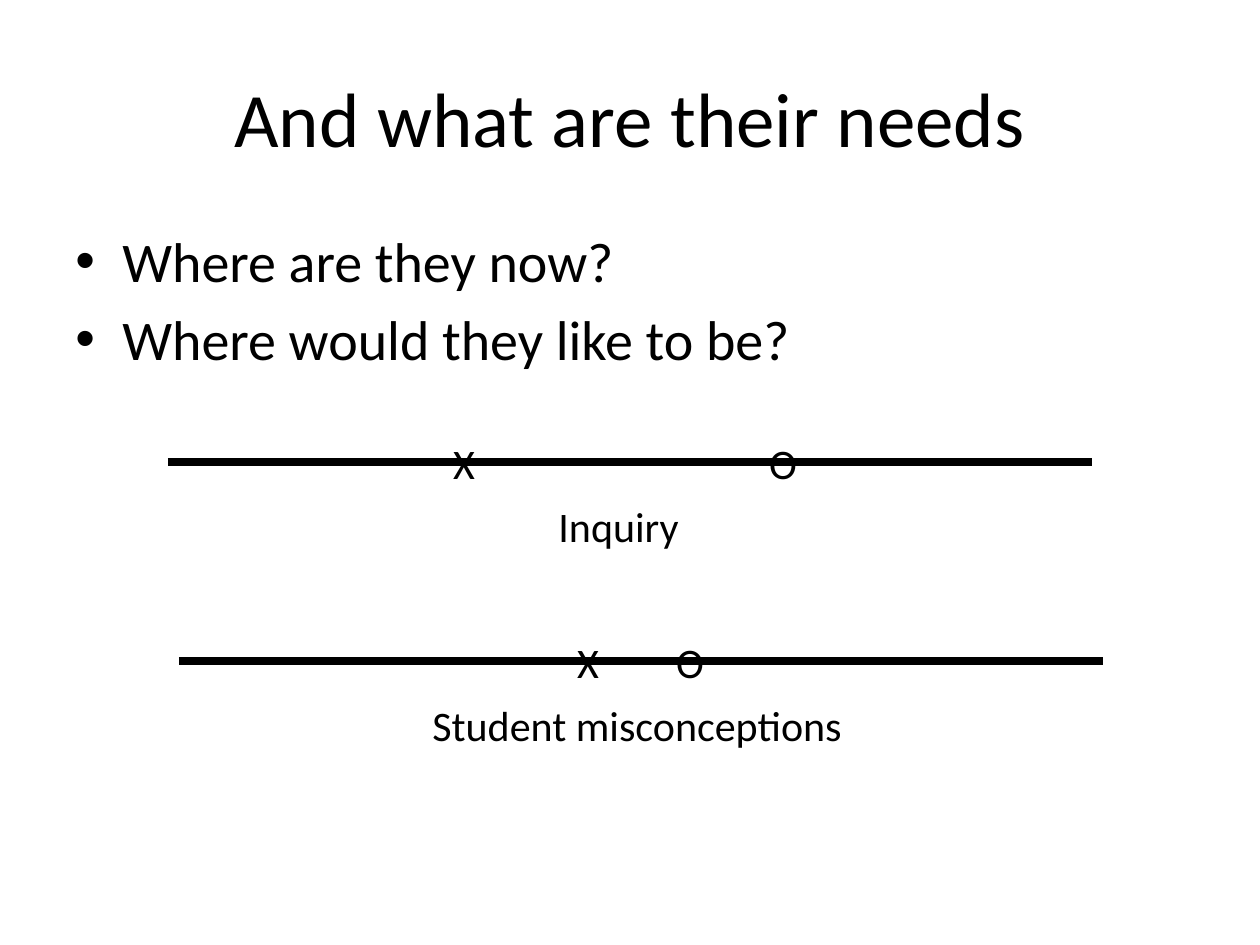
from lxml.etree import SubElement
from pptx import Presentation
from pptx.dml.color import RGBColor
from pptx.enum.shapes import MSO_CONNECTOR
from pptx.enum.text import MSO_ANCHOR, PP_ALIGN
from pptx.oxml.ns import qn
from pptx.util import Emu, Pt

BLACK = RGBColor(0x00, 0x00, 0x00)
WHITE = RGBColor(0xFF, 0xFF, 0xFF)
FONT = "Calibri"
PIXELS_PER_INCH = 126
MARKER_WIDTH = 60
ROW_HEIGHT = 63


def px(length):
    return Emu(round(length * 914400 / PIXELS_PER_INCH))


def set_attributes(target, values):
    for name, value in values.items():
        setattr(target, name, value)


def add_text(slide, box, lines, size, frame_format=None, paragraph_format=None):
    shape = slide.shapes.add_textbox(*map(px, box))
    frame = shape.text_frame
    set_attributes(frame, {"word_wrap": True, **(frame_format or {})})
    frame.text = "\n".join(lines)
    for paragraph in frame.paragraphs:
        set_attributes(paragraph, paragraph_format or {})
        for run in paragraph.runs:
            set_attributes(run.font, {"name": FONT, "size": Pt(size)})
            run.font.color.rgb = BLACK
    return frame


def add_title(slide, box, text):
    add_text(slide, box, [text], 44,
             {"vertical_anchor": MSO_ANCHOR.MIDDLE},
             {"alignment": PP_ALIGN.CENTER})


def add_bullets(slide, box, lines):
    frame = add_text(slide, box, lines, 32,
                     paragraph_format={"space_before": Pt(6.4)})
    indent = px(47)
    for paragraph in frame.paragraphs:
        properties = paragraph._p.get_or_add_pPr()
        properties.set("marL", str(indent))
        properties.set("indent", str(-indent))
        SubElement(properties, qn("a:buFont"), typeface="Arial")
        SubElement(properties, qn("a:buChar"), char="•")


def add_scale(slide, box, markers, label, label_offset):
    left, top, width, height = box
    middle = top + ROW_HEIGHT // 2
    line = slide.shapes.add_connector(
        MSO_CONNECTOR.STRAIGHT,
        px(left), px(middle), px(left + width), px(middle))
    line.line.color.rgb = BLACK
    line.line.width = Pt(4.5)
    SubElement(line._element.spPr, qn("a:effectLst"))
    for text, center in markers.items():
        marker_left = left + center - MARKER_WIDTH // 2
        add_text(slide, (marker_left, top, MARKER_WIDTH, ROW_HEIGHT), [text], 24,
                 paragraph_format={"alignment": PP_ALIGN.CENTER})
    label_box = (left + label_offset, top + ROW_HEIGHT,
                 width - 2 * label_offset, height - ROW_HEIGHT)
    add_text(slide, label_box, [label], 24, {"word_wrap": False})


def main():
    presentation = Presentation()
    set_attributes(presentation, {"slide_width": px(1260), "slide_height": px(945)})
    slide = presentation.slides.add_slide(presentation.slide_layouts[6])
    slide.background.fill.solid()
    slide.background.fill.fore_color.rgb = WHITE

    add_title(slide, (63, 38, 1134, 157), "And what are their needs")
    add_bullets(slide, (63, 220, 1134, 624),
                ["Where are they now?", "Where would they like to be?"])
    add_scale(slide, (168, 431, 924, 126), {"X": 296, "O": 615}, "Inquiry", 378)
    add_scale(slide, (179, 630, 924, 126), {"X": 409, "O": 511},
              "Student misconceptions", 241)
    presentation.save("out.pptx")


if __name__ == "__main__":
    main()
